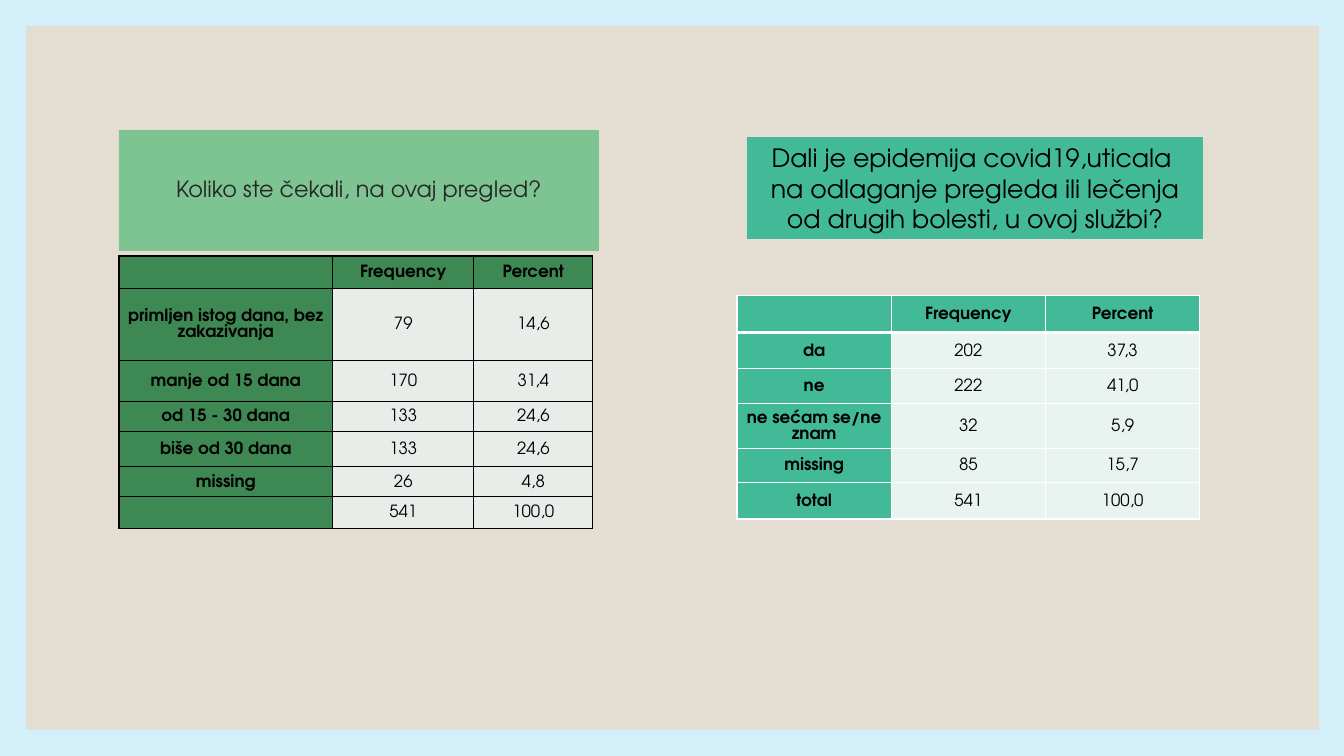
from lxml import etree
from pptx import Presentation
from pptx.dml.color import RGBColor
from pptx.enum.shapes import MSO_SHAPE
from pptx.enum.text import MSO_ANCHOR, MSO_AUTO_SIZE, PP_ALIGN
from pptx.oxml.ns import qn
from pptx.util import Inches, Pt

RECTANGLE = MSO_SHAPE.RECTANGLE
MIDDLE = MSO_ANCHOR.MIDDLE
CENTER = PP_ALIGN.CENTER
NO_AUTOFIT = MSO_AUTO_SIZE.NONE
TITLE_ONLY = 5

WAITING = [
    ("", "Frequency", "Percent"),
    ("primljen istog dana, bez zakazivanja", "79", "14,6"),
    ("manje od 15 dana", "170", "31,4"),
    ("od 15 - 30 dana", "133", "24,6"),
    ("biše od 30 dana", "133", "24,6"),
    ("missing", "26", "4,8"),
    ("", "541", "100,0"),
]
POSTPONED = [
    ("", "Frequency", "Percent"),
    ("da", "202", "37,3"),
    ("ne", "222", "41,0"),
    ("ne sećam se/ne znam", "32", "5,9"),
    ("missing", "85", "15,7"),
    ("total", "541", "100,0"),
]


def paint(target, color):
    target.solid()
    target.fore_color.rgb = RGBColor.from_string(color)


def add_cell_border(cell, side, color, width):
    line = etree.SubElement(cell._tc.get_or_add_tcPr(), qn(f"a:ln{side}"), w=str(Pt(width)))
    fill = etree.SubElement(line, qn("a:solidFill"))
    etree.SubElement(fill, qn("a:srgbClr"), val=color)


class SurveySlide:
    font_name = "TeX Gyre Adventor"

    def __init__(self, deck, background):
        self.slide = deck.slides.add_slide(deck.slide_layouts[TITLE_ONLY])
        paint(self.slide.background.fill, background)

    def set_text(self, frame, lines, size, color="000000", bold=False, spacing=None):
        """Fill a text frame with centred paragraphs of one style."""
        frame.word_wrap = True
        frame.vertical_anchor = MIDDLE
        frame.text = "\n".join(lines)
        for paragraph in frame.paragraphs:
            paragraph.alignment = CENTER
            paragraph.line_spacing = spacing
            paragraph.font.name = self.font_name
            paragraph.font.size = Pt(size)
            paragraph.font.bold = bold
            paragraph.font.color.rgb = RGBColor.from_string(color)

    def panel(self, left, top, width, height, color):
        panel = self.slide.shapes.add_shape(
            RECTANGLE, Inches(left), Inches(top), Inches(width), Inches(height))
        panel.shadow.inherit = False
        paint(panel.fill, color)
        panel.line.fill.background()
        return panel

    def backdrop(self, left, top, width, height, color):
        """Add a panel behind the title."""
        panel = self.panel(left, top, width, height, color)
        self.slide.shapes.title._element.addprevious(panel._element)

    def title(self, text, left, top, width, height, color):
        title = self.slide.shapes.title
        title.left, title.top = Inches(left), Inches(top)
        title.width, title.height = Inches(width), Inches(height)
        paint(title.fill, color)
        self.set_text(title.text_frame, [text], 16, "262626", spacing=0.9)
        title.text_frame.auto_size = NO_AUTOFIT

    def question(self, lines, left, top, width, height, color):
        box = self.panel(left, top, width, height, color)
        self.set_text(box.text_frame, lines, 18)

    def table(self, rows, left, top, widths, heights, head, body, border, rule=1):
        """Add a table; rule is the width of the line under its header."""
        table = self.slide.shapes.add_table(
            len(rows), len(widths), Inches(left), Inches(top),
            Inches(sum(widths)), Inches(sum(heights))).table
        table.first_row = table.horz_banding = False
        for column, width in zip(table.columns, widths):
            column.width = Inches(width)
        for r, (values, height) in enumerate(zip(rows, heights)):
            table.rows[r].height = Inches(height)
            sides = {"L": 1, "R": 1, "T": rule if r == 1 else 1, "B": rule if r == 0 else 1}
            for c, value in enumerate(values):
                cell = table.cell(r, c)
                heading = r == 0 or c == 0
                cell.margin_left = cell.margin_right = cell.margin_top = Inches(0.01)
                cell.margin_bottom = 0
                for side, line_width in sides.items():
                    add_cell_border(cell, side, border, line_width)
                paint(cell.fill, head if heading else body)
                self.set_text(cell.text_frame, [value], 12, bold=heading, spacing=Pt(11.5))
                cell.vertical_anchor = MIDDLE


def main():
    deck = Presentation()
    deck.slide_width, deck.slide_height = Inches(13.33), Inches(7.5)
    survey = SurveySlide(deck, "D2EFFA")
    survey.backdrop(0.26, 0.26, 12.82, 6.98, "E3DED1")
    survey.title("Koliko ste čekali, na ovaj pregled?", 1.18, 1.29, 4.76, 1.2, "7EC492")
    survey.table(WAITING, 1.18, 2.54, [2.12, 1.4, 1.18],
                 [0.32, 0.72, 0.4, 0.3, 0.35, 0.3, 0.31], "3E8853", "E8EDE9", "000000")
    survey.table(POSTPONED, 7.31, 2.93, [1.53] * 3,
                 [0.37, 0.36, 0.34, 0.45, 0.34, 0.36], "42BA97", "E9F3EF", "FFFFFF", rule=3)
    survey.question(["Dali je epidemija covid19,uticala ",
                     "na odlaganje pregleda ili lečenja od drugih bolesti, u ovoj službi?"],
                    7.41, 1.36, 4.52, 1.01, "42BA97")
    deck.save("out.pptx")


if __name__ == "__main__":
    main()
